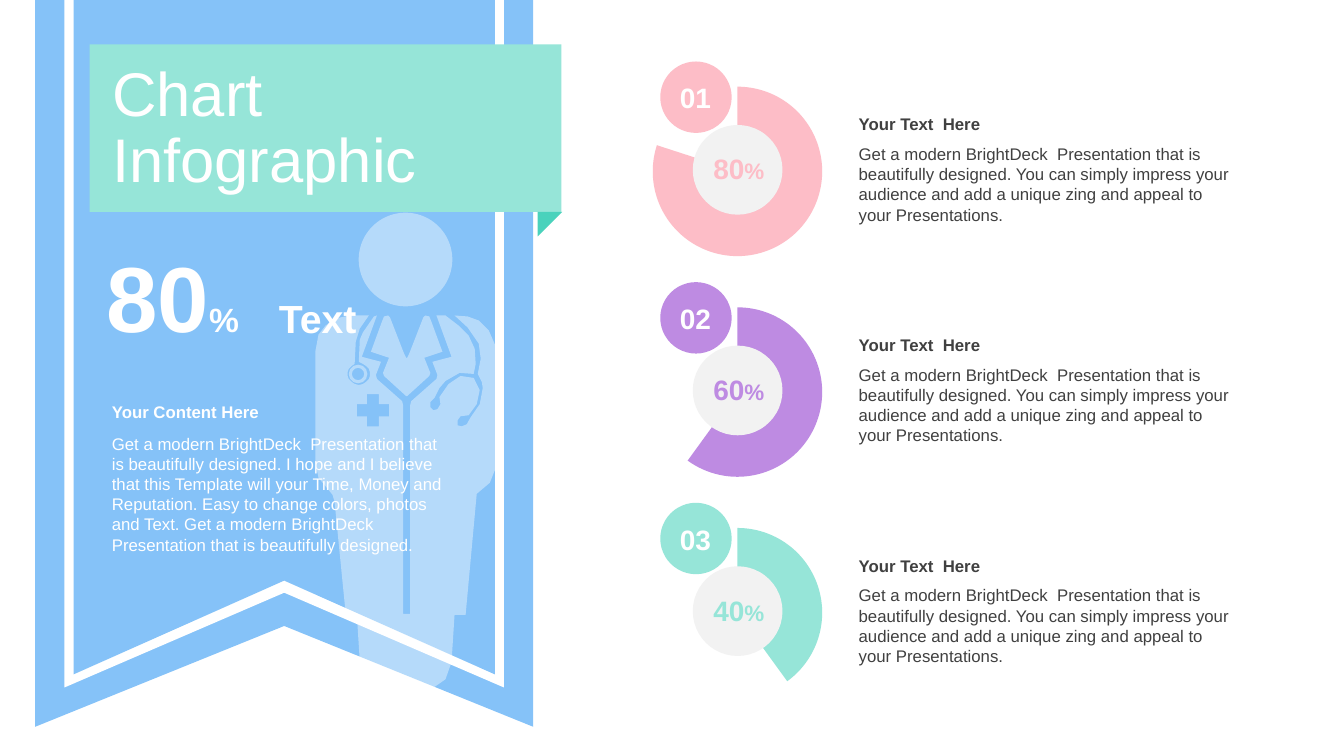
from math import cos, radians, sin

from lxml import etree
from pptx import Presentation
from pptx.chart.data import CategoryChartData
from pptx.dml.color import RGBColor
from pptx.enum.chart import XL_CHART_TYPE as CT
from pptx.enum.shapes import MSO_SHAPE as SHAPE
from pptx.enum.text import MSO_ANCHOR as ANCHOR, PP_ALIGN as ALIGN
from pptx.oxml import parse_xml
from pptx.oxml.ns import nsdecls, qn
from pptx.util import Cm, Pt

rgb = RGBColor.from_string
FONT = "Arial"
WHITE, BLUE, MINT, DARK_MINT = "FFFFFF", "85C2F8", "96E5D8", "4AD2BC"
PINK, PURPLE, LIGHT_GREY, GREY = "FDBDC7", "BE8BE2", "F2F2F2", "404040"
GRID = Cm(0.0254)  # freeform points are whole numbers on this grid
FIGURE_OPACITY = 40


def paint(sp, color, opacity=None):
    """Flat fill without outline or shadow; opacity in percent."""
    sp.shadow.inherit = False
    sp.line.fill.background()
    sp.fill.solid()
    sp.fill.fore_color.rgb = rgb(color)
    if opacity:
        clr = sp._element.spPr.find(qn("a:solidFill"))[0]
        etree.SubElement(clr, qn("a:alpha")).set("val", str(opacity * 1000))


def add_text(box, runs, color, align=ALIGN.LEFT, anchor=ANCHOR.TOP):
    """Text box at box (left, top, width, height in cm) with runs of (text, size, bold)."""
    tf = shapes.add_textbox(*map(Cm, box)).text_frame
    tf.word_wrap = True
    tf.vertical_anchor = anchor
    p = tf.paragraphs[0]
    p.alignment = align
    for text, size, bold in runs:
        r = p.add_run()
        r.text = text
        r.font.name, r.font.size, r.font.bold = FONT, Pt(size), bold
        r.font.color.rgb = rgb(color)


prs = Presentation()
prs.slide_width, prs.slide_height = Cm(33.87), Cm(19.05)
slide = prs.slides.add_slide(prs.slide_layouts[5])
shapes = slide.shapes

# Ribbon: three nested swallowtails, the middle one showing as a white border
RIBBON_CENTRE = 282
for half_width, tip, notch, color in [
    (247, 721, 621, BLUE),
    (218, 682, 576 + 12, WHITE),
    (209, 669, 576, BLUE),
]:
    left, right = RIBBON_CENTRE - half_width, RIBBON_CENTRE + half_width
    fb = shapes.build_freeform(left, 0, scale=GRID)
    fb.add_line_segments([(right, 0), (right, tip), (RIBBON_CENTRE, notch), (left, tip)])
    paint(fb.convert_to_shape(), color)

# Banner, its folded corner and the title
banner = shapes.add_shape(SHAPE.RECTANGLE, Cm(2.26), Cm(1.12), Cm(11.89), Cm(4.22))
paint(banner, MINT)
fold = shapes.add_shape(SHAPE.RIGHT_TRIANGLE, Cm(13.55), Cm(5.34), Cm(0.62), Cm(0.62))
fold.rotation = 90
paint(fold, DARK_MINT)

title = shapes.title
shapes._spTree.append(title._element)  # in front of the banner
title.left, title.top, title.width, title.height = Cm(2.57), Cm(1.07), Cm(10.34), Cm(4.39)
tf = title.text_frame
tf.text = "Chart Infographic"
tf.word_wrap = True
tf.vertical_anchor = ANCHOR.MIDDLE
p = tf.paragraphs[0]
p.alignment, p.line_spacing = ALIGN.LEFT, 0.9
font = p.runs[0].font
font.name, font.size, font.color.rgb = FONT, Pt(44), rgb(WHITE)

# Ribbon text
add_text((1.9, 5.92, 4.9, 3.07), [("80", 66, True), ("%", 24, True)], WHITE,
         ALIGN.CENTER, ANCHOR.MIDDLE)
add_text((6.78, 7.29, 3.71, 1.45), [("Text", 28, True)], WHITE)
add_text((2.57, 10.01, 9, 0.76), [("Your Content Here", 12, True)], WHITE)
add_text((2.57, 10.8, 9, 3.33), [(
    "Get a modern BrightDeck  Presentation that is beautifully designed. I hope and I "
    "believe that this Template will your Time, Money and Reputation. Easy to change "
    "colors, photos and Text. Get a modern BrightDeck  Presentation that is "
    "beautifully designed.", 12, False)], WHITE)

# Rows: doughnut with hub, numbered badge and description
FIRST_TOP, PITCH = 1.55, 5.56
TEXT_LEFT, TEXT_WIDTH = 21.39, 10.08
DESCRIPTION = ("Get a modern BrightDeck  Presentation that is beautifully designed. "
               "You can simply impress your audience and add a unique zing and appeal "
               "to your Presentations.")
for i, (percent, color) in enumerate([(80, PINK), (60, PURPLE), (40, MINT)]):
    top = FIRST_TOP + i * PITCH
    data = CategoryChartData()
    data.categories = ["1", "2"]
    data.add_series("Series 1", (percent, 100 - percent))
    frame = shapes.add_chart(CT.DOUGHNUT, Cm(16.21), Cm(top + 0.39), Cm(4.8), Cm(4.67), data)
    chart = frame.chart
    chart.has_legend = chart.has_title = False
    chart.font.name, chart.font.size = FONT, Pt(18)
    chart.font.color.rgb = rgb("000000")
    plot = chart.plots[0]
    plot.vary_by_categories = True
    plot._element.find(qn("c:holeSize")).set("val", "70")
    share, rest = (plot.series[0].points[n].format for n in range(2))
    share.fill.solid()
    share.fill.fore_color.rgb = rgb(color)
    rest.fill.background()
    for part in (share, rest):
        part.line.fill.background()
    area = chart._chartSpace.chart.plotArea
    for layout in area.findall(qn("c:layout")):
        area.remove(layout)
    area.insert(0, parse_xml(
        f'<c:layout {nsdecls("c")}><c:manualLayout><c:layoutTarget val="inner"/>'
        '<c:xMode val="edge"/><c:yMode val="edge"/><c:x val="0.05"/><c:y val="0.05"/>'
        '<c:w val="0.89"/><c:h val="0.92"/></c:manualLayout></c:layout>'))

    hub = shapes.add_shape(SHAPE.OVAL, Cm(17.46), Cm(top + 1.6), Cm(2.26), Cm(2.26))
    paint(hub, LIGHT_GREY)
    badge = shapes.add_shape(SHAPE.OVAL, Cm(16.64), Cm(top), Cm(1.8), Cm(1.8))
    paint(badge, color)
    add_text((17.53, top + 2.15, 2.18, 1.12), [(str(percent), 20, True), ("%", 16, True)],
             color, ALIGN.CENTER)
    add_text((16.66, top + 0.36, 1.73, 1.12), [(f"{i + 1:02}", 20, True)], WHITE, ALIGN.CENTER)
    add_text((TEXT_LEFT, top + 1.2, TEXT_WIDTH, 0.76), [("Your Text  Here", 12, True)], GREY)
    add_text((TEXT_LEFT, top + 1.95, TEXT_WIDTH, 2.31), [(DESCRIPTION, 12, False)], GREY)

# Doctor: the coat's outline runs clockwise from the feet, part by part;
# lapels and collar are mirrored about the body's axis
BODY_AXIS = 403.5
legs_left = [
    (422, 683), (418, 682), (409, 678), (402, 672), (390, 680), (379, 682), (369, 680),
    (361, 672), (357, 656), (354, 609), (343, 609),
]
arm_left = [
    (332, 498), (330, 491), (326, 486), (316, 474), (313, 459), (313, 348), (316, 332),
    (323, 323), (333, 316), (347, 313), (366, 313),
]
tube_outer = [(357, 326), (353, 339), (352, 359)]
chest_piece = [(356 - 11 * sin(radians(a)), 371 - 11 * cos(radians(a)))
               for a in range(20, 360, 20)]
tube_inner = [(356, 359), (357, 337), (360, 330), (371, 314)]
lapel_left = [
    (374, 313), (359, 354), (378, 359), (373, 372), (374, 376), (399, 398), (400, 402),
    (400, 609),
]
earpieces = [
    (442, 313), (455, 323), (465, 333), (471, 346), (472, 361), (470, 371), (456, 370),
    (442, 378), (436, 385), (431, 395), (427, 399), (427, 404), (430, 407), (434, 406),
    (437, 401), (436, 394), (445, 381), (457, 373), (470, 375), (476, 387), (473, 401),
    (465, 412), (457, 413), (454, 417), (454, 422), (458, 423), (463, 421), (467, 414),
    (476, 401), (479, 385), (478, 379), (474, 371), (477, 356), (475, 341), (464, 325),
    (451, 313),
]
arm_right = [(464, 314), (475, 318), (485, 328), (492, 344), (492, 464), (486, 479), (473, 490)]
legs_right = [(462, 610), (451, 610), (448, 657), (442, 674), (429, 683)]
collar_left = [
    (403, 393), (381, 373), (380, 370), (386, 355), (368, 349), (379, 319), (381, 314),
    (385, 313), (387, 315), (401, 351), (403, 355),
]
lapel_right, collar_right = (
    [(2 * BODY_AXIS - x, y) for x, y in reversed(half)] for half in (lapel_left, collar_left))
coat = (legs_left + arm_left + tube_outer + chest_piece + tube_inner + lapel_left
        + lapel_right + earpieces + arm_right + legs_right)
collar = collar_left + collar_right

# Cross cut out of the coat: each arm end is a quarter turn of the one before
CROSS_X, CROSS_Y, REACH, HALF_ARM = 370, 407, 16, 6
cross = []
for dx, dy in [(1, 0), (0, 1), (-1, 0), (0, -1)]:
    for side in (-HALF_ARM, HALF_ARM):
        cross.append((CROSS_X + REACH * dx - side * dy, CROSS_Y + REACH * dy + side * dx))
    cross.append((CROSS_X + HALF_ARM * (dx - dy), CROSS_Y + HALF_ARM * (dx + dy)))

for outline, holes in [(coat, [cross]), (collar, [])]:
    fb = shapes.build_freeform(*outline[0], scale=GRID)
    fb.add_line_segments(outline[1:])
    for hole in holes:
        fb.move_to(*hole[0])
        fb.add_line_segments(hole[1:])
    paint(fb.convert_to_shape(), WHITE, FIGURE_OPACITY)
head = shapes.add_shape(SHAPE.OVAL, Cm(9.04), Cm(5.36), Cm(2.36), Cm(2.36))
paint(head, WHITE, FIGURE_OPACITY)
ring = shapes.add_shape(SHAPE.DONUT, Cm(8.79), Cm(9.19), Cm(0.47), Cm(0.47))
ring.adjustments[0] = 0.17
paint(ring, WHITE, FIGURE_OPACITY)

prs.save("out.pptx")
